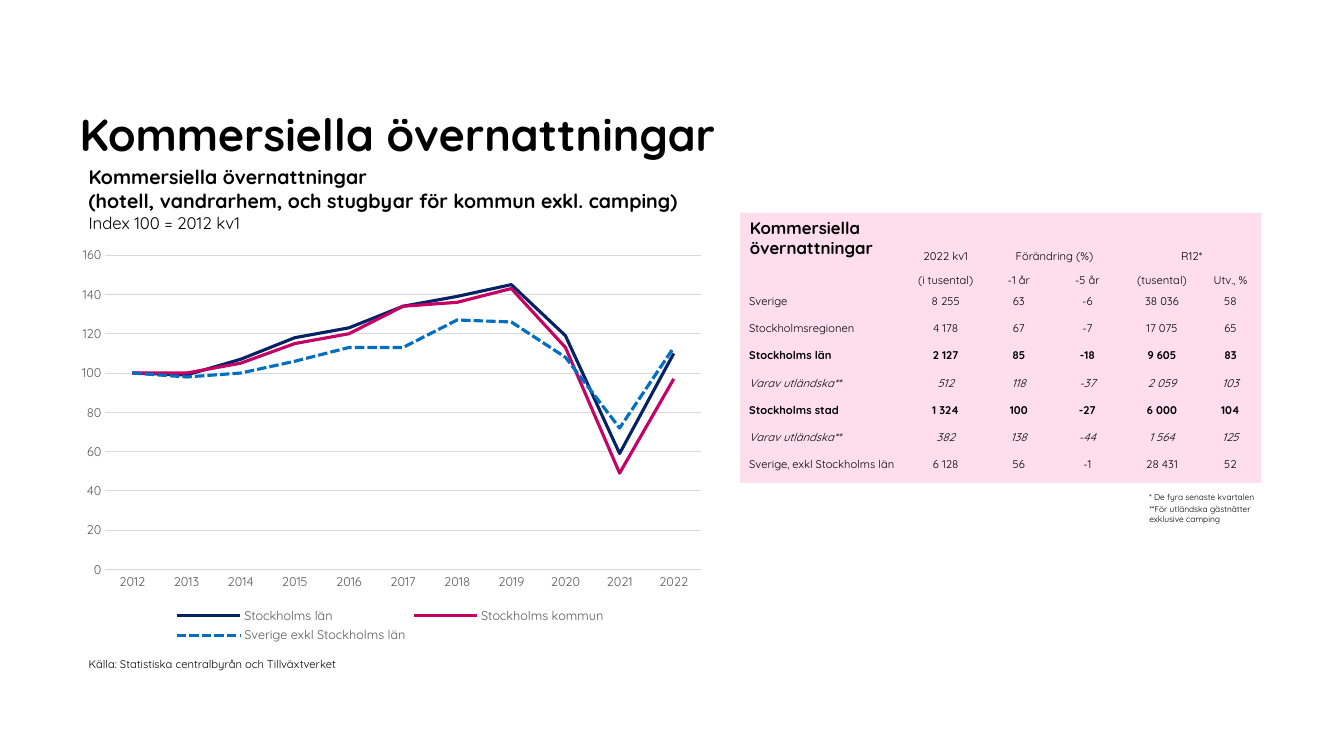
from dataclasses import dataclass

from lxml.etree import SubElement
from pptx import Presentation
from pptx.chart.data import CategoryChartData
from pptx.dml.color import RGBColor
from pptx.enum.chart import XL_CHART_TYPE as ChartType, XL_LEGEND_POSITION as LegendPosition
from pptx.enum.chart import XL_MARKER_STYLE as Marker, XL_TICK_MARK as TickMark
from pptx.enum.dml import MSO_LINE as Dash
from pptx.enum.shapes import MSO_SHAPE as Shape
from pptx.enum.text import MSO_ANCHOR as Anchor, MSO_AUTO_SIZE as AutoSize, PP_ALIGN as Align
from pptx.oxml.ns import qn
from pptx.util import Pt

PX = 9144
FONT = "Quicksand"
NO_GRID_STYLE = "{2D5ABB26-0587-4C30-8999-92F81FD0307C}"
COLORS = {
    "text": "000000", "panel": "FEDEED", "axis": "595959", "grid": "D9D9D9",
    "county": "052364", "city": "C40064", "rest": "006EBF",
}


@dataclass(frozen=True)
class Span:
    text: str
    size: int
    bold: bool = False
    italic: bool = False


@dataclass(frozen=True)
class Label:
    box: tuple[int, int, int, int]
    paragraphs: tuple[tuple[Span, ...], ...]


@dataclass(frozen=True)
class Row:
    cells: tuple[str, ...]
    height: int = 27
    header: bool = False
    bold: bool = False
    italic: bool = False


@dataclass(frozen=True)
class Series:
    name: str
    color: str
    values: tuple[int, ...]
    dash: Dash = Dash.SOLID


PANEL = (734, 211, 517, 268)
PANEL_HEADING = Label((734, 211, 240, 50), (
    (Span("Kommersiella", 12, True), Span("övernattningar", 12, True)),))
LABELS = (
    Label((78, 647, 277, 24), ((Span("Källa: Statistiska centralbyrån och Tillväxtverket", 8),),)),
    Label((78, 159, 640, 77), (
        (Span("Kommersiella övernattningar", 14, True),),
        (Span("(hotell, vandrarhem, och stugbyar för kommun exkl. camping)", 14, True),
         Span("Index 100 = 2012 kv1", 12)))),
    Label((1130, 483, 140, 20), ((Span("* De fyra senaste kvartalen", 6),),)),
    Label((1130, 495, 149, 30), ((Span("**För utländska gästnätter exklusive camping", 6),),)),
)
COLUMNS = (164, 80, 65, 71, 77, 59)
ROWS = (
    Row(("", "2022 kv1", "Förändring (%)", "", "R12*", ""), 23, True),
    Row(("", "(i tusental)", "-1 år", "-5 år", "(tusental)", "Utv., %"), 24, True),
    Row(("Sverige", "8 255", "63", "-6", "38 036", "58")),
    Row(("Stockholmsregionen", "4 178", "67", "-7", "17 075", "65")),
    Row(("Stockholms län", "2 127", "85", "-18", "9 605", "83"), bold=True),
    Row(("Varav utländska**", "512", "118", "-37", "2 059", "103"), italic=True),
    Row(("Stockholms stad", "1 324", "100", "-27", "6 000", "104"), bold=True),
    Row(("Varav utländska**", "382", "138", "-44", "1 564", "125"), italic=True),
    Row(("Sverige, exkl Stockholms län", "6 128", "56", "-1", "28 431", "52")),
)
SERIES = (
    Series("Stockholms län", "county", (100, 99, 107, 118, 123, 134, 139, 145, 119, 59, 110)),
    Series("Stockholms kommun", "city", (100, 100, 105, 115, 120, 134, 136, 143, 113, 49, 97)),
    Series("Sverige exkl Stockholms län", "rest",
           (100, 98, 100, 106, 113, 113, 127, 126, 108, 72, 113), Dash.SQUARE_DOT),
)
PLOT_LAYOUT = {"layoutTarget": "inner", "xMode": "edge", "yMode": "edge",
               "x": 0.06, "y": 0.04, "w": 0.92, "h": 0.77}


def scaled(box: tuple[int, ...]) -> list[int]:
    return [length * PX for length in box]


def rgb(name: str) -> RGBColor:
    return RGBColor.from_string(COLORS[name])


def set_font(font, size: int, color: str = "text", **extra) -> None:
    for key, value in {"name": FONT, "size": Pt(size), **extra}.items():
        setattr(font, key, value)
    font.color.rgb = rgb(color)


def write_span(para, span: Span) -> None:
    run = para.add_run()
    run.text = span.text
    set_font(run.font, span.size, bold=span.bold, italic=span.italic)


def add_title(page) -> None:
    title = page.shapes.title
    title.left, title.top, title.width, title.height = scaled((79, 37, 922, 122))
    frame = title.text_frame
    frame_format = {"margin_left": 0, "margin_top": 0, "margin_right": 0, "margin_bottom": 0,
                    "vertical_anchor": Anchor.BOTTOM, "word_wrap": True,
                    "auto_size": AutoSize.NONE}
    for key, value in frame_format.items():
        setattr(frame, key, value)
    para = frame.paragraphs[0]
    para.alignment = Align.LEFT
    write_span(para, Span("Kommersiella övernattningar", 32, True))


def add_label(page, label: Label) -> None:
    frame = page.shapes.add_textbox(*scaled(label.box)).text_frame
    frame.word_wrap = True
    for index, spans in enumerate(label.paragraphs):
        para = frame.add_paragraph() if index else frame.paragraphs[0]
        for line, span in enumerate(spans):
            if line:
                para.add_line_break()
            write_span(para, span)


def add_panel(page) -> None:
    panel = page.shapes.add_shape(Shape.RECTANGLE, *scaled(PANEL))
    panel.shadow.inherit = False
    panel.fill.solid()
    panel.fill.fore_color.rgb = rgb("panel")
    panel.line.fill.background()


def fill_cell(cell, row: Row, column: int) -> None:
    cell_format = {"margin_left": (1 if column else 9) * PX, "margin_top": PX,
                   "margin_right": PX, "margin_bottom": 0,
                   "vertical_anchor": Anchor.BOTTOM if row.header else Anchor.MIDDLE}
    for key, value in cell_format.items():
        setattr(cell, key, value)
    cell.fill.background()
    para = cell.text_frame.paragraphs[0]
    para.alignment = Align.CENTER if column else Align.LEFT
    if row.cells[column]:
        write_span(para, Span(row.cells[column], 8, row.bold, row.italic))
    else:
        SubElement(para._p, qn("a:endParaRPr"), sz="800")


def add_overnight_table(page) -> None:
    box = (734, 238, sum(COLUMNS), sum(row.height for row in ROWS))
    table = page.shapes.add_table(len(ROWS), len(COLUMNS), *scaled(box)).table
    table.first_row = table.horz_banding = False
    table._tbl.tblPr.find(qn("a:tableStyleId")).text = NO_GRID_STYLE
    for column, width in zip(table.columns, COLUMNS):
        column.width = width * PX
    for index, row in enumerate(ROWS):
        table.rows[index].height = row.height * PX
        for column in range(len(COLUMNS)):
            fill_cell(table.cell(index, column), row, column)
    for start in (2, 4):
        table.cell(0, start).merge(table.cell(0, start + 1))


def add_index_chart(page) -> None:
    data = CategoryChartData()
    data.categories = [str(year) for year in range(2012, 2023)]
    for series in SERIES:
        data.add_series(series.name, series.values)
    chart = page.shapes.add_chart(ChartType.LINE, *scaled((66, 237, 642, 405)), data).chart
    chart.has_title = False
    set_font(chart.font, 10)
    chart.has_legend = True
    chart.legend.position = LegendPosition.BOTTOM
    chart.legend.include_in_layout = False
    set_font(chart.legend.font, 9, "axis")
    for axis in (chart.category_axis, chart.value_axis):
        axis.major_tick_mark = axis.minor_tick_mark = TickMark.NONE
        set_font(axis.tick_labels.font, 9, "axis")
    values = chart.value_axis
    values.minimum_scale, values.maximum_scale, values.major_unit = 0, 160, 20
    values.format.line.fill.background()
    for line in (chart.category_axis.format.line, values.major_gridlines.format.line):
        line.color.rgb = rgb("grid")
        line.width = Pt(0.75)
    plot = chart.plots[0]
    plot.vary_by_categories = False
    for drawn, series in zip(plot.series, SERIES):
        drawn.smooth = False
        drawn.marker.style = Marker.NONE
        line = drawn.format.line
        line.color.rgb = rgb(series.color)
        line.width = Pt(2.25)
        line.dash_style = series.dash
    area = chart._chartSpace.chart.plotArea
    for layout in area.findall(qn("c:layout")):
        area.remove(layout)
    layout = SubElement(area, qn("c:layout"))
    area.insert(0, layout)
    manual = SubElement(layout, qn("c:manualLayout"))
    for key, value in PLOT_LAYOUT.items():
        SubElement(manual, qn(f"c:{key}"), val=str(value))


def main() -> None:
    deck = Presentation()
    deck.slide_width, deck.slide_height = scaled((1333, 750))
    page = deck.slides.add_slide(deck.slide_layouts[5])
    add_title(page)
    add_panel(page)
    for label in (PANEL_HEADING, *LABELS):
        add_label(page, label)
    add_overnight_table(page)
    add_index_chart(page)
    deck.save("out.pptx")


if __name__ == "__main__":
    main()
